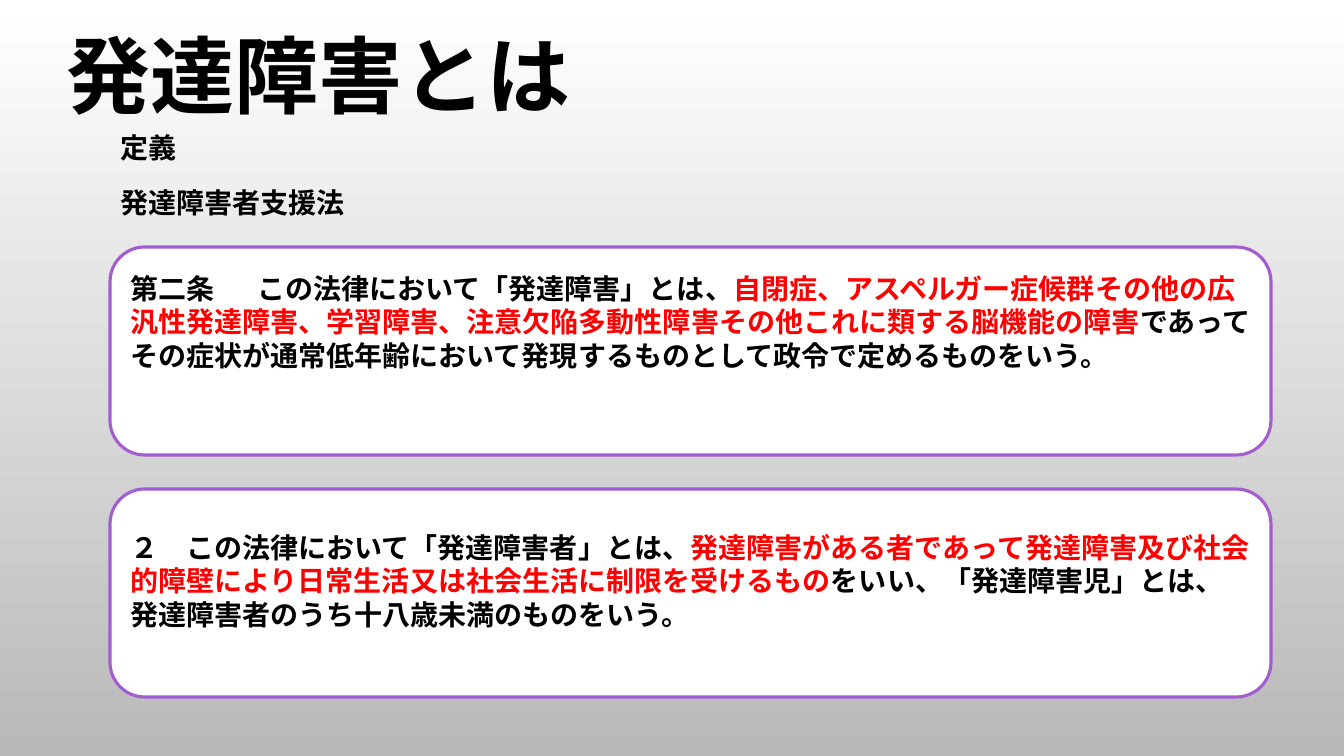
from lxml.etree import SubElement
from pptx import Presentation
from pptx.dml.color import RGBColor
from pptx.enum.lang import MSO_LANGUAGE_ID as Lang
from pptx.enum.shapes import MSO_SHAPE as Shape
from pptx.enum.text import MSO_ANCHOR as Anchor, PP_ALIGN as Align
from pptx.oxml.ns import qn
from pptx.util import Emu, Pt

EMU_PER_PX = 914400 / 100.8
BLACK, RED, WHITE, PURPLE = "000000", "FF0000", "FFFFFF", "A35DD1"
EAST_ASIAN = "Noto Sans CJK JP"


def px(length):
    """Turn whole pixels into EMU."""
    return Emu(round(length * EMU_PER_PX))


def color(hex_string):
    """Turn a hex string into a colour."""
    return RGBColor.from_string(hex_string)


def write(paragraph, text, size=20, font=EAST_ASIAN, ink=BLACK, bold=True):
    """Add one formatted run to a paragraph."""
    run = paragraph.add_run()
    run.text = text
    run.font.size = Pt(size)
    run.font.name = font
    run.font.bold = bold
    run.font.color.rgb = color(ink)
    run.font.language_id = Lang.JAPANESE
    SubElement(run.font._element, qn("a:ea"), typeface=EAST_ASIAN)


class DefinitionSlide:
    """Hold the style and the slide that is being filled."""

    def __init__(self, deck):
        """Add a blank slide to the deck."""
        self.slide = deck.slides.add_slide(deck.slide_layouts[6])

    def background(self, top, bottom):
        """Shade the background from top to bottom."""
        fill = self.slide.background.fill
        fill.gradient()
        fill.gradient_angle = 270
        for stop, shade in zip(fill.gradient_stops, (top, bottom)):
            stop.color.rgb = color(shade)

    def frame(self, shape, top=5, right=10, anchor=Anchor.TOP):
        """Prepare the text frame of a shape."""
        frame = shape.text_frame
        frame.word_wrap = True
        frame.margin_left, frame.margin_right = px(10), px(right)
        frame.margin_top, frame.margin_bottom = px(top), px(5)
        frame.vertical_anchor = anchor
        return frame

    def title(self, text, *box):
        """Add the large heading."""
        heading = self.slide.shapes.add_textbox(*map(px, box))
        frame = self.frame(heading, right=60, anchor=Anchor.MIDDLE)
        paragraph = frame.paragraphs[0]
        paragraph.alignment = Align.CENTER
        paragraph.line_spacing = Pt(72)
        write(paragraph, text, size=60, font="Cabin")

    def subtitles(self, lines, *box):
        """Add the lines below the heading."""
        body = self.slide.shapes.add_textbox(*map(px, box))
        frame = self.frame(body, top=8)
        for index, line in enumerate(lines):
            paragraph = frame.add_paragraph() if index else frame.paragraphs[0]
            paragraph.line_spacing = Pt(28.8)
            if index:
                paragraph.space_before = Pt(10)
            write(paragraph, line, font="Arial")

    def article(self, parts, *box, inset):
        """Add a rounded panel with one article of the law."""
        panel = self.slide.shapes.add_shape(Shape.ROUNDED_RECTANGLE, *map(px, box))
        panel.shadow.inherit = False
        panel.fill.solid()
        panel.fill.fore_color.rgb = color(WHITE)
        panel.line.color.rgb = color(PURPLE)
        panel.line.width = Pt(2.25)
        paragraph = self.frame(panel, top=inset).paragraphs[0]
        tabs = SubElement(paragraph._p.get_or_add_pPr(), qn("a:tabLst"))
        SubElement(tabs, qn("a:tab"), pos=str(px(127)), algn="l")
        paragraph.alignment = Align.LEFT
        paragraph.line_spacing = Pt(24)
        for text, ink in zip(parts, (BLACK, RED, BLACK)):
            write(paragraph, text, ink=ink)


def main():
    """Build and save the slide."""
    deck = Presentation()
    deck.slide_width, deck.slide_height = px(1344), px(756)
    page = DefinitionSlide(deck)
    page.background(WHITE, "B9B9B9")
    page.title("発達障害とは", 20, 15, 647, 118)
    page.subtitles(("定義", "発達障害者支援法"), 110, 116, 735, 131)
    articles = (
        (14, ("第二条\tこの法律において「発達障害」とは、",
              "自閉症、アスペルガー症候群その他の広汎性発達障害、学習障害、"
              "注意欠陥多動性障害その他これに類する脳機能の障害",
              "であってその症状が通常低年齢において発現するものとして"
              "政令で定めるものをいう。")),
        (31, ("２　この法律において「発達障害者」とは、",
              "発達障害がある者であって発達障害及び社会的障壁により"
              "日常生活又は社会生活に制限を受けるもの",
              "をいい、「発達障害児」とは、発達障害者のうち"
              "十八歳未満のものをいう。")),
    )
    for row, (inset, parts) in enumerate(articles):
        page.article(parts, 110, 247 + 242 * row, 1161, 208, inset=inset)
    deck.save("out.pptx")


if __name__ == "__main__":
    main()
